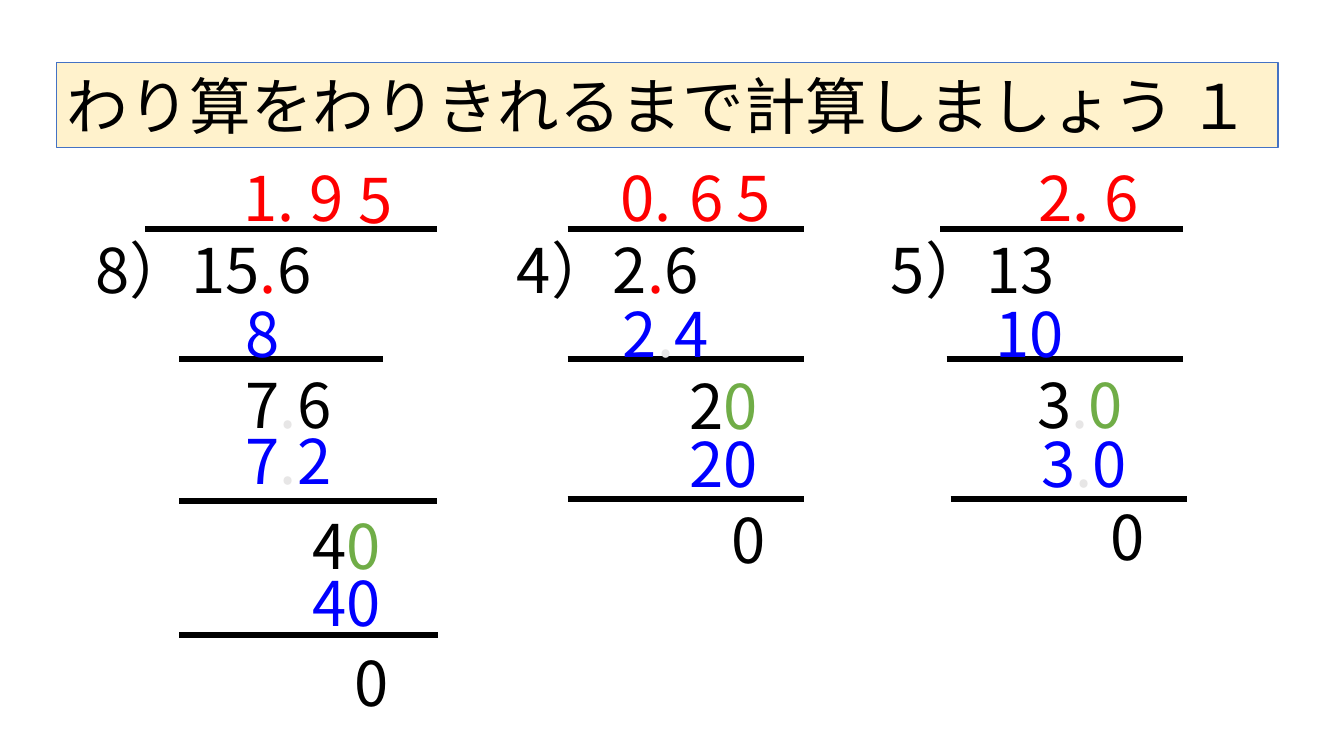
"""Build a slide with three worked long divisions of decimals."""
from lxml import etree
from pptx import Presentation
from pptx import util as u
from pptx.dml.color import RGBColor
from pptx.enum import shapes, text
from pptx.oxml import ns

THEME = {
    "font": "Noto Sans CJK JP", "size": 44, "rule": 4.5, "edge": 0.75,
    "ink": "000000", "ans": "FF0000", "sub": "0000FF", "zero": "70AD47",
    "dim": "E7E6E6", "band": "FFF2CC", "rim": "4472C4",
}
HIGH = 60.6


def tint(name):
    return RGBColor.from_string(THEME[name])


def write(box, runs):
    frame = box.text_frame
    frame.word_wrap = True
    frame.auto_size = text.MSO_AUTO_SIZE.SHAPE_TO_FIT_TEXT
    frame.vertical_anchor = text.MSO_ANCHOR.TOP
    para = frame.paragraphs[0]
    para.alignment = text.PP_ALIGN.LEFT
    para.line_spacing = 1.0
    for words, hue in runs:
        run = para.add_run()
        run.text = words
        run.font.size = u.Pt(THEME["size"])
        run.font.color.rgb = tint(hue)
        run.font.name = THEME["font"]
        east = etree.SubElement(run.font._element, ns.qn("a:ea"))
        east.set("typeface", THEME["font"])


deck = Presentation()
deck.slide_width, deck.slide_height = u.Pt(960), u.Pt(540)
slide = deck.slides.add_slide(deck.slide_layouts[5])

title = slide.shapes.title
title.left, title.top = u.Pt(40.3), u.Pt(44.6)
title.width, title.height = u.Pt(872.6), u.Pt(HIGH)
title.fill.solid()
title.fill.fore_color.rgb = tint("band")
title.line.color.rgb = tint("rim")
title.line.width = u.Pt(THEME["edge"])
write(title, [("わり算をわりきれるまで計算しましょう １", "ink")])

RULES = [
    (103.7, 312.5, 163.4), (128.2, 273.6, 256.3),
    (128.2, 312.5, 357.8), (128.2, 313.2, 453.6),
    (405.4, 574.6, 163.4), (405.4, 574.6, 256.3), (405.4, 574.6, 356.4),
    (671.8, 845.3, 163.4), (676.1, 845.3, 256.3), (679, 848.2, 356.4),
]
for left, right, y in RULES:
    rule = slide.shapes.add_connector(
        shapes.MSO_CONNECTOR.STRAIGHT, u.Pt(left), u.Pt(y), u.Pt(right), u.Pt(y))
    rule.line.color.rgb = tint("ink")
    rule.line.width = u.Pt(THEME["rule"])
    etree.SubElement(rule._element.spPr, ns.qn("a:effectLst"))

FIRST = [
    (61.2, 162, 200.9, [("8）15", "ink"), (".", "ans"), ("6", "ink")]),
    (167, 110.9, 62.6, [("1.", "ans")]),
    (213.8, 110.9, 46.1, [("9", "ans")]),
    (249.1, 112.3, 46.1, [("5", "ans")]),
    (168.5, 208.1, 46.1, [("8", "sub")]),
    (168.5, 258.5, 93.6, [("7", "ink"), (".", "dim"), ("6", "ink")]),
    (168.5, 298.8, 93.6, [("7", "sub"), (".", "dim"), ("2", "sub")]),
    (216, 359.3, 79.2, [("4", "ink"), ("0", "zero")]),
    (216, 400.3, 79.2, [("40", "sub")]),
    (246.2, 457.2, 46.1, [("0", "ink")]),
]
SECOND = [
    (362.2, 162, 169.9, [("4）2", "ink"), (".", "ans"), ("6", "ink")]),
    (436.3, 110.9, 62.6, [("0.", "ans")]),
    (485.3, 110.9, 46.1, [("6", "ans")]),
    (519.1, 110.9, 46.1, [("5", "ans")]),
    (437.8, 208.1, 93.6, [("2", "sub"), (".", "dim"), ("4", "sub")]),
    (485.3, 259.2, 93.6, [("2", "ink"), ("0", "zero")]),
    (485.3, 301, 93.6, [("20", "sub")]),
    (515.5, 355, 46.1, [("0", "ink")]),
]
THIRD = [
    (629.3, 162, 153.4, [("5）13", "ink")]),
    (734.4, 110.9, 62.6, [("2.", "ans")]),
    (781.9, 110.9, 46.1, [("6", "ans")]),
    (704.2, 208.1, 77, [("10", "sub")]),
    (733.7, 258.5, 93.6, [("3", "ink"), (".", "dim"), ("0", "zero")]),
    (736.6, 301, 111.6, [("3", "sub"), (".", "dim"), ("0", "sub")]),
    (786.2, 352.8, 46.1, [("0", "ink")]),
]
for left, top, wide, runs in FIRST + SECOND + THIRD:
    box = slide.shapes.add_textbox(u.Pt(left), u.Pt(top), u.Pt(wide), u.Pt(HIGH))
    write(box, runs)

deck.save("out.pptx")
